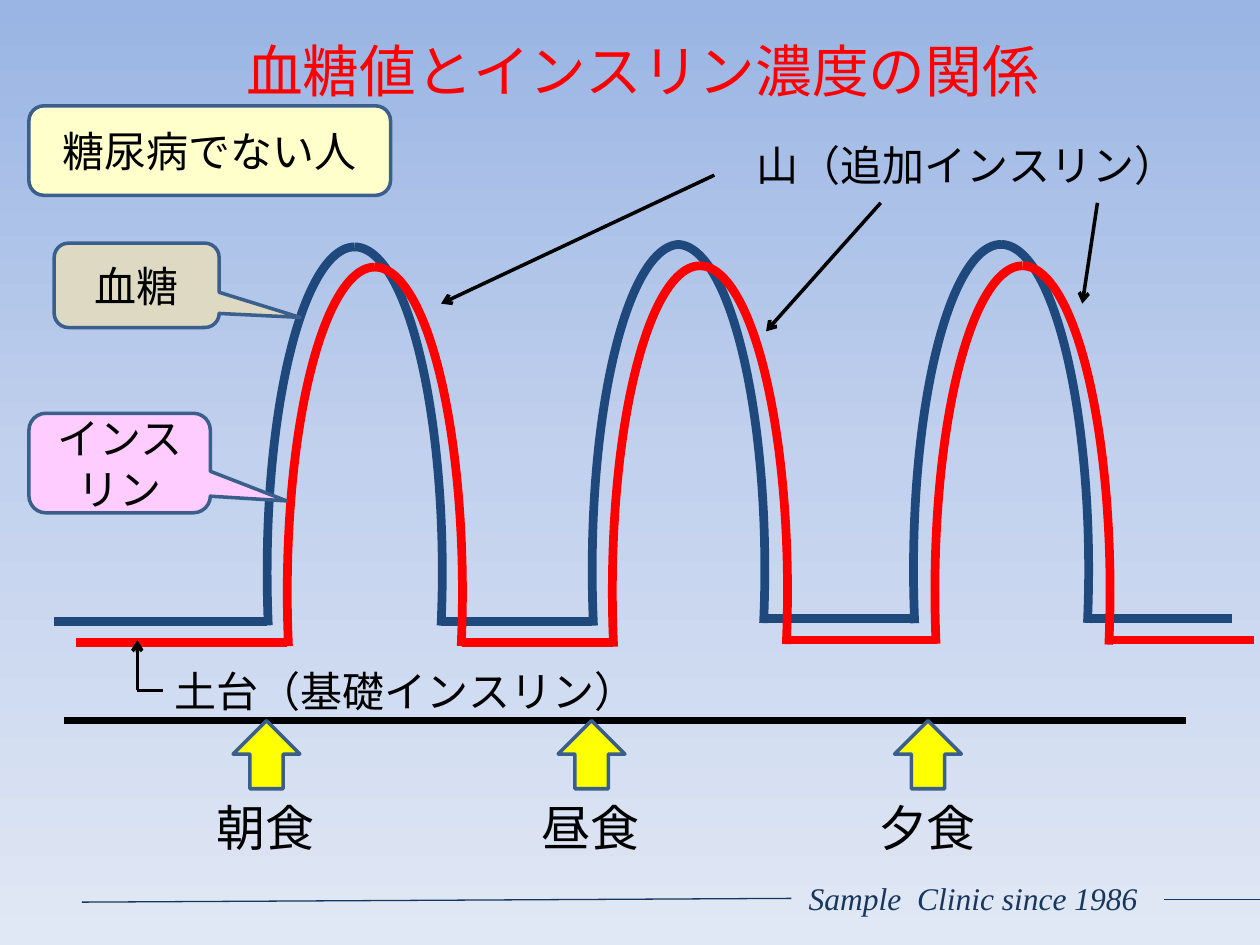
from copy import deepcopy

from pptx import Presentation
from pptx.dml.color import RGBColor
from pptx.enum.lang import MSO_LANGUAGE_ID
from pptx.enum.shapes import MSO_CONNECTOR, MSO_SHAPE
from pptx.enum.text import MSO_ANCHOR, MSO_AUTO_SIZE, PP_ALIGN
from pptx.oxml.ns import qn
from pptx.util import Inches, Pt
from lxml import etree

STRAIGHT = MSO_CONNECTOR.STRAIGHT
ARC, DOWN_ARROW = MSO_SHAPE.ARC, MSO_SHAPE.DOWN_ARROW
ROUND_BOX, CALLOUT = MSO_SHAPE.ROUNDED_RECTANGLE, MSO_SHAPE.ROUNDED_RECTANGULAR_CALLOUT
MIDDLE, CENTER, LEFT = MSO_ANCHOR.MIDDLE, PP_ALIGN.CENTER, PP_ALIGN.LEFT
GROW = MSO_AUTO_SIZE.SHAPE_TO_FIT_TEXT
JAPANESE, ENGLISH = MSO_LANGUAGE_ID.JAPANESE, MSO_LANGUAGE_ID.ENGLISH_US

BLACK = RGBColor(0x00, 0x00, 0x00)
RED = RGBColor(0xFF, 0x00, 0x00)
BLUE = RGBColor(0x1F, 0x49, 0x7D)
NAVY = RGBColor(0x17, 0x37, 0x5E)
OUTLINE = RGBColor(0x3A, 0x5F, 0x8C)
YELLOW = RGBColor(0xFF, 0xFF, 0x00)
CREAM = RGBColor(0xFF, 0xFF, 0xCC)
BEIGE = RGBColor(0xDD, 0xD9, 0xC3)
PINK = RGBColor(0xFF, 0xCC, 0xFF)
SKY = [(0, RGBColor(0x9A, 0xB5, 0xE4)),
       (0.5, RGBColor(0xC2, 0xD1, 0xED)),
       (1, RGBColor(0xE1, 0xE8, 0xF5))]

PEAK_WIDTH, PEAK_HEIGHT = 1.39, 5.16
ARC_START = 162  # twelve o'clock

# Each peak: top, then left and end angle of its rising and falling half
GLUCOSE_PEAKS = [(1.96, (2.12, 19.03), (2.12, 19.1)),
                 (1.94, (4.7, 19.84), (4.68, 19.08)),
                 (1.94, (7.25, 19.13), (7.25, 19.03))]
INSULIN_PEAKS = [(2.12, (2.28, 19.21), (2.28, 19.17)),
                 (2.11, (4.86, 19.75), (4.86, 18.98)),
                 (2.11, (7.42, 18.9), (7.42, 19.13))]

# Each stretch between peaks: start, end, height
GLUCOSE_BASE = [(0.43, 2.12, 4.93), (3.5, 4.7, 4.93),
                (6.08, 7.27, 4.91), (8.62, 9.78, 4.91)]
INSULIN_BASE = [(0.6, 2.28, 5.1), (3.67, 4.86, 5.1),
                (6.25, 7.44, 5.08), (8.78, 9.95, 5.08)]

MEALS = [("朝食", 1.85), ("昼食", 4.43), ("夕食", 7.1)]
PEAK_POINTERS = [((5.67, 1.39), (3.5, 2.41)),
                 ((6.99, 1.61), (6.08, 2.63)),
                 ((8.71, 1.61), (8.59, 2.41))]


def paint_background(slide):
    fill = slide.background.fill
    fill.gradient()
    fill.gradient_angle = 270
    first_stop = next(slide._element.iter(qn("a:gs")))
    first_stop.addnext(deepcopy(first_stop))
    for stop, (position, color) in zip(fill.gradient_stops, SKY):
        stop.position = position
        stop.color.rgb = color


def write(frame, text, size, color=BLACK, align=LEFT, font="Calibri",
          italic=False, language=JAPANESE):
    paragraph = frame.paragraphs[0]
    paragraph.alignment = align
    run = paragraph.add_run()
    run.text = text
    run.font.name = font
    run.font.size = Pt(size)
    run.font.italic = italic
    run.font.color.rgb = color
    run.font.language_id = language


def add_label(slide, box, text, size, wrap=False, **style):
    frame = slide.shapes.add_textbox(*map(Inches, box)).text_frame
    frame.word_wrap = wrap
    frame.auto_size = GROW
    write(frame, text, size, **style)


def add_title(slide, box, text):
    frame = slide.shapes.add_textbox(*map(Inches, box)).text_frame
    frame.word_wrap = True
    frame.vertical_anchor = MIDDLE
    write(frame, text, 32.4, color=RED, align=CENTER)


def add_line(slide, start, end, color, width, arrow=False):
    line = slide.shapes.add_connector(STRAIGHT, *map(Inches, start + end))
    line.line.color.rgb = color
    line.line.width = Pt(width)
    if arrow:
        etree.SubElement(line.line._get_or_add_ln(), qn("a:tailEnd"), type="arrow")
    etree.SubElement(line._element.spPr, qn("a:effectLst"))


def add_filled(slide, kind, box, fill):
    shape = slide.shapes.add_shape(kind, *map(Inches, box))
    shape.shadow.inherit = False
    shape.fill.solid()
    shape.fill.fore_color.rgb = fill
    shape.line.color.rgb = OUTLINE
    shape.line.width = Pt(2)
    return shape


def add_caption_box(slide, kind, box, fill, text, adjustments=()):
    shape = add_filled(slide, kind, box, fill)
    for index, value in enumerate(adjustments):
        shape.adjustments[index] = value
    shape.text_frame.word_wrap = True
    shape.text_frame.vertical_anchor = MIDDLE
    write(shape.text_frame, text, 24, align=CENTER)


def add_half_peak(slide, left, top, end_angle, color, rising):
    arc = slide.shapes.add_shape(ARC, Inches(left), Inches(top),
                                 Inches(PEAK_WIDTH), Inches(PEAK_HEIGHT))
    arc.shadow.inherit = False
    arc.fill.background()
    arc.line.color.rgb = color
    arc.line.width = Pt(5)
    arc.adjustments[0] = ARC_START
    arc.adjustments[1] = end_angle
    if rising:
        arc._element.spPr.xfrm.set("flipH", "1")


def add_curve(slide, peaks, base, color):
    for top, (rise_left, rise_end), (fall_left, fall_end) in peaks:
        add_half_peak(slide, rise_left, top, rise_end, color, True)
        add_half_peak(slide, fall_left, top, fall_end, color, False)
    for start, end, height in base:
        add_line(slide, (start, height), (end, height), color, 5)


def add_meal(slide, name, left):
    arrow = add_filled(slide, DOWN_ARROW, (left, 5.72, 0.53, 0.54), YELLOW)
    arrow.rotation = 180
    add_label(slide, (left - 0.23, 6.28, 0.99, 0.57), name, 28)


def main():
    deck = Presentation()
    deck.slide_width, deck.slide_height = Inches(10), Inches(7.5)
    slide = deck.slides.add_slide(deck.slide_layouts[6])
    paint_background(slide)
    add_title(slide, (0.6, 0.28, 9, 0.55), "血糖値とインスリン濃度の関係")

    # Time axis with meals
    add_line(slide, (9.41, 5.72), (0.51, 5.72), BLACK, 4)
    for name, left in MEALS:
        add_meal(slide, name, left)

    # Curves
    add_curve(slide, GLUCOSE_PEAKS, GLUCOSE_BASE, BLUE)
    add_curve(slide, INSULIN_PEAKS, INSULIN_BASE, RED)

    # Heading box and curve names
    add_caption_box(slide, ROUND_BOX, (0.23, 0.84, 2.87, 0.71), CREAM, "糖尿病でない人")
    add_caption_box(slide, CALLOUT, (0.43, 1.93, 1.31, 0.67), BEIGE, "血糖",
                    (0.99, 0.38, 0.17))
    add_caption_box(slide, CALLOUT, (0.23, 3.28, 1.44, 0.79), PINK, "インスリン",
                    (0.92, 0.38, 0.17))

    # Basal insulin
    add_label(slide, (1.29, 5.23, 3.9, 0.5), "土台（基礎インスリン）", 24)
    add_line(slide, (1.09, 5.48), (1.09, 5.08), BLACK, 2, arrow=True)
    add_line(slide, (1.09, 5.48), (1.29, 5.48), BLACK, 2)

    # Additional insulin
    add_label(slide, (5.91, 1.06, 3.57, 0.5), "山（追加インスリン）", 24)
    for start, end in PEAK_POINTERS:
        add_line(slide, start, end, BLACK, 2, arrow=True)

    # Footer
    add_line(slide, (0.65, 7.16), (6.28, 7.13), NAVY, 0.75)
    add_line(slide, (9.24, 7.14), (10, 7.14), NAVY, 0.75)
    add_label(slide, (6.32, 6.93, 2.92, 0.4), "Sample  Clinic since 1986", 18,
              wrap=True, color=NAVY, font="Times New Roman", italic=True,
              language=ENGLISH)

    deck.save("out.pptx")


if __name__ == "__main__":
    main()
